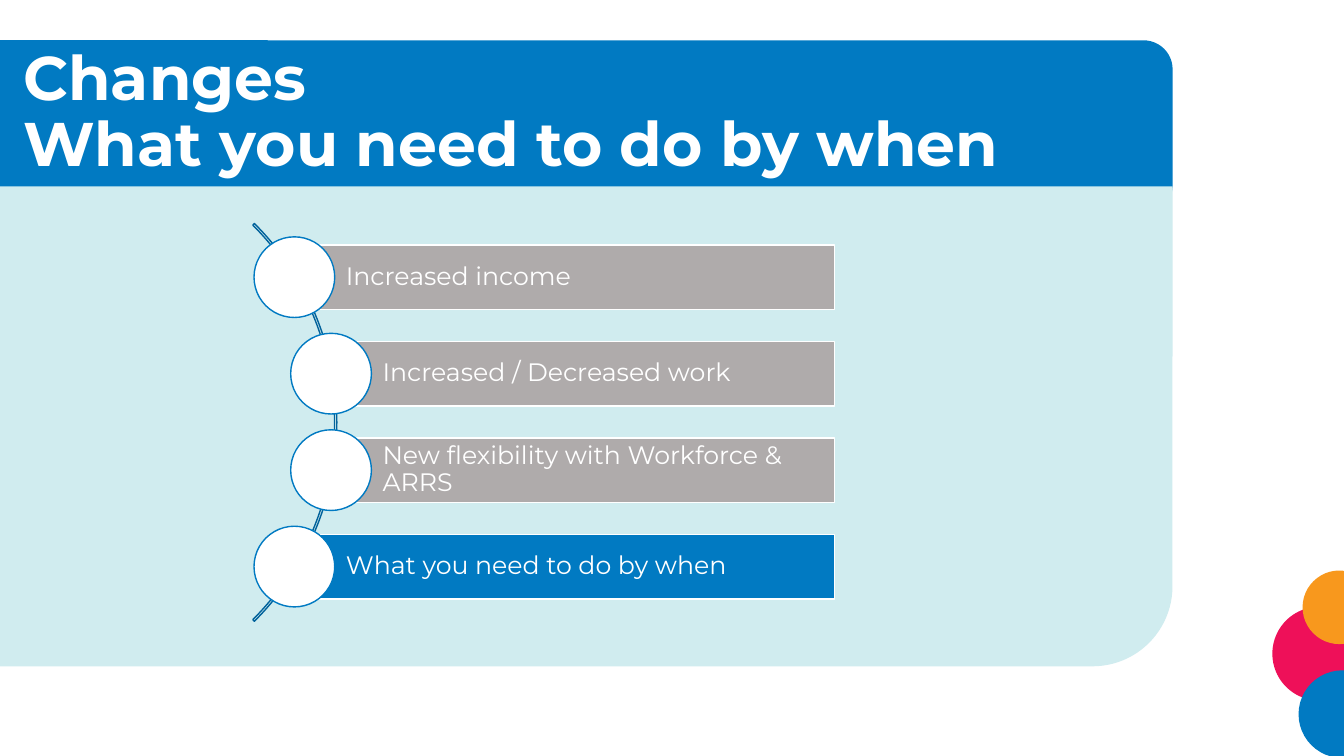
"""Build the slide on changes and what needs doing by when."""
from dataclasses import dataclass

from pptx import Presentation, util as u
from pptx.dml.color import RGBColor
from pptx.enum import shapes, text
from pptx.oxml.ns import qn
from pptx.shapes.autoshape import Shape
from pptx.slide import Slide
from pptx.text.text import TextFrame

WIDTH, HEIGHT = u.Inches(13.33), u.Inches(7.5)
COLUMN, ROW = WIDTH / 100, HEIGHT / 100

FONT = "Montserrat"
WHITE = RGBColor(0xFF, 0xFF, 0xFF)
BLUE = RGBColor(0x01, 0x7A, 0xC2)
DARK_BLUE = RGBColor(0x01, 0x62, 0x9B)
PALE_BLUE = RGBColor(0xD0, 0xEC, 0xEF)
GREY = RGBColor(0xAF, 0xAB, 0xAB)
PINK = RGBColor(0xEE, 0x10, 0x59)
ORANGE = RGBColor(0xF8, 0x98, 0x1D)

Kind = shapes.MSO_SHAPE


@dataclass(frozen=True)
class Area:
    """A box whose sides are counted in columns and rows."""
    left: float
    top: float
    columns: float
    rows: float

    def place(self) -> tuple[int, int, int, int]:
        """Return left, top, width and height as lengths."""
        return (round(self.left * COLUMN), round(self.top * ROW),
                round(self.columns * COLUMN), round(self.rows * ROW))


@dataclass(frozen=True)
class Dot:
    """A decorative circle with its diameter in rows."""
    left: float
    top: float
    diameter: float
    color: RGBColor


@dataclass(frozen=True)
class Step:
    """One entry of the curved list."""
    label: str
    left: float
    color: RGBColor


BAND = Area(-3, 5.33, 90.25, 23.07)
PANEL = Area(-0.83, 24.67, 88.07, 63.47)
TITLE = Area(0.98, 5.33, 86.27, 19.33)

DOTS = (
    Dot(94.67, 80.27, 12.4, PINK),
    Dot(96.62, 88.67, 11.6, BLUE),
    Dot(96.92, 75.47, 9.73, ORANGE),
)

OUTER_LEFT, INNER_LEFT = 21.9, 24.63
STEPS = (
    Step("Increased income", OUTER_LEFT, GREY),
    Step("Increased / Decreased work", INNER_LEFT, GREY),
    Step("New flexibility with Workforce & ARRS", INNER_LEFT, GREY),
    Step("What you need to do by when", OUTER_LEFT, BLUE),
)
FIRST_TOP, PITCH = 32.4, 12.76
BAR_RIGHT, BAR_ROWS = 62.07, 8.53
NODE_ROWS = 10.67


def circle_area(left: float, top: float, diameter: float) -> Area:
    """Return a square area with its side given in rows."""
    return Area(left, top, diameter * ROW / COLUMN, diameter)


def add_shape(slide: Slide, kind: Kind, area: Area, fill: RGBColor | None,
              line: RGBColor | None = None) -> Shape:
    """Add a flat shape with an optional fill and outline."""
    shape = slide.shapes.add_shape(kind, *area.place())
    shape.shadow.inherit = False
    if fill is None:
        shape.fill.background()
    else:
        shape.fill.solid()
        shape.fill.fore_color.rgb = fill
    if line is None:
        shape.line.fill.background()
    else:
        shape.line.color.rgb = line
        shape.line.width = u.Pt(1)
    return shape


def write(frame: TextFrame, words: str, size: int, bold: bool) -> None:
    """Write white, left-aligned text, centred vertically."""
    frame.text = words
    frame.word_wrap = True
    frame.auto_size = text.MSO_AUTO_SIZE.NONE
    frame.vertical_anchor = text.MSO_ANCHOR.MIDDLE
    paragraph = frame.paragraphs[0]
    paragraph.alignment = text.PP_ALIGN.LEFT
    paragraph.line_spacing = 0.9
    paragraph.font.name = FONT
    paragraph.font.size = u.Pt(size)
    paragraph.font.bold = bold
    paragraph.font.color.rgb = WHITE


def add_backdrop(slide: Slide) -> None:
    """Add the title band, the panel and the corner dots."""
    add_shape(slide, Kind.ROUNDED_RECTANGLE, BAND, BLUE)
    panel = add_shape(slide, Kind.ROUND_1_RECTANGLE, PANEL, PALE_BLUE)
    panel._element.spPr.find(qn("a:xfrm")).set("flipV", "1")
    for dot in DOTS:
        area = circle_area(dot.left, dot.top, dot.diameter)
        add_shape(slide, Kind.OVAL, area, dot.color)


def add_title(slide: Slide) -> None:
    """Place the title in front of its band."""
    title = slide.shapes.title
    title.left, title.top, title.width, title.height = TITLE.place()
    write(title.text_frame, "Changes\vWhat you need to do by when", 44, True)
    slide.shapes._spTree.append(title._element)


def add_arc(slide: Slide) -> None:
    """Add the thin arc that links the steps."""
    arc = add_shape(slide, Kind.BLOCK_ARC, circle_area(-16.8, 18.67, 74.4),
                    None, DARK_BLUE)
    for index, value in enumerate((189, 27, 0.004)):
        arc.adjustments[index] = value


def add_step(slide: Slide, step: Step, top: float) -> None:
    """Add a labelled bar with a circle centred on its left edge."""
    area = Area(step.left, top, BAR_RIGHT - step.left, BAR_ROWS)
    bar = add_shape(slide, Kind.RECTANGLE, area, step.color, WHITE)
    frame = bar.text_frame
    frame.margin_left = round(3.83 * COLUMN)
    frame.margin_right = round(0.38 * COLUMN)
    frame.margin_top = frame.margin_bottom = round(0.67 * ROW)
    write(frame, step.label, 18, False)
    node = circle_area(step.left - NODE_ROWS * ROW / COLUMN / 2,
                       top + (BAR_ROWS - NODE_ROWS) / 2, NODE_ROWS)
    add_shape(slide, Kind.OVAL, node, WHITE, BLUE)


def main() -> None:
    """Create and save the presentation."""
    presentation = Presentation()
    presentation.slide_width, presentation.slide_height = WIDTH, HEIGHT
    slide = presentation.slides.add_slide(presentation.slide_layouts[5])
    add_backdrop(slide)
    add_title(slide)
    add_arc(slide)
    for index, step in enumerate(STEPS):
        add_step(slide, step, FIRST_TOP + index * PITCH)
    presentation.save("out.pptx")


if __name__ == "__main__":
    main()
